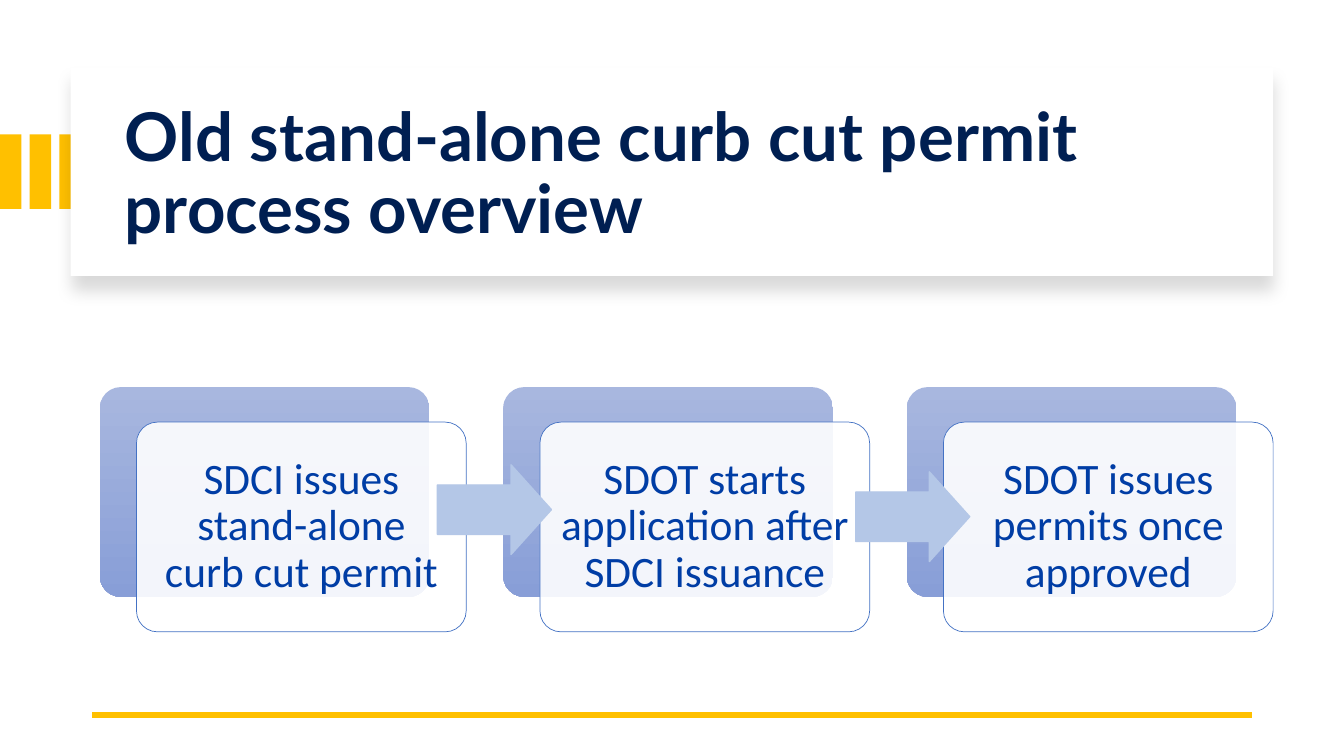
from lxml import etree
from pptx import Presentation
from pptx.dml.color import RGBColor
from pptx.enum.shapes import MSO_CONNECTOR, MSO_SHAPE
from pptx.enum.text import MSO_ANCHOR, PP_ALIGN
from pptx.oxml import parse_xml
from pptx.oxml.ns import nsdecls, qn
from pptx.util import Pt

RECTANGLE = MSO_SHAPE.RECTANGLE
ROUNDED = MSO_SHAPE.ROUNDED_RECTANGLE
RIGHT_ARROW = MSO_SHAPE.RIGHT_ARROW
STRAIGHT = MSO_CONNECTOR.STRAIGHT
MIDDLE = MSO_ANCHOR.MIDDLE
CENTER = PP_ALIGN.CENTER

WHITE = RGBColor(0xFF, 0xFF, 0xFF)
GOLD = RGBColor(0xFF, 0xC0, 0x00)
NAVY = RGBColor(0x00, 0x1F, 0x52)
BLUE = RGBColor(0x00, 0x3D, 0xA5)
OUTLINE_BLUE = RGBColor(0x44, 0x72, 0xC4)
ARROW_BLUE = RGBColor(0xB4, 0xC7, 0xE7)
GRADIENT_TOP = RGBColor(0xA8, 0xB7, 0xDF)
GRADIENT_BOTTOM = RGBColor(0x88, 0x9E, 0xD7)

STEPS = [
    "SDCI issues stand-alone curb cut permit",
    "SDOT starts application after SDCI issuance",
    "SDOT issues permits once approved",
]
STEP_PITCH = 288.2
CARD_WIDTH, CARD_HEIGHT = 235.5, 149.8
CARD_SHIFT_X, CARD_SHIFT_Y = 26.2, 25


def add_block(slide, kind, left, top, width, height, fill=None):
    """Add a shape without outline or shadow, filled if a colour is given."""
    shape = slide.shapes.add_shape(kind, Pt(left), Pt(top), Pt(width), Pt(height))
    shape.line.fill.background()
    shape.shadow.inherit = False
    if fill is not None:
        shape.fill.solid()
        shape.fill.fore_color.rgb = fill
    return shape


def write_text(shape, text, font_name, size, color, margin):
    """Write one wrapped, vertically centred paragraph and return it."""
    frame = shape.text_frame
    frame.word_wrap = True
    frame.vertical_anchor = MIDDLE
    frame.margin_left = frame.margin_right = Pt(margin)
    frame.margin_top = frame.margin_bottom = Pt(margin)
    paragraph = frame.paragraphs[0]
    paragraph.text = text
    paragraph.line_spacing = 0.9
    paragraph.font.name = font_name
    paragraph.font.size = Pt(size)
    paragraph.font.color.rgb = color
    return paragraph


def add_drop_shadow(shape):
    """Give a shape a soft shadow that falls straight down."""
    properties = shape._element.spPr
    properties.remove(properties.find(qn("a:effectLst")))
    properties.append(parse_xml(
        f'<a:effectLst {nsdecls("a")}>'
        '<a:outerShdw blurRad="139700" dist="127000" dir="5400000" algn="t" rotWithShape="0">'
        '<a:srgbClr val="000000"><a:alpha val="15000"/></a:srgbClr>'
        '</a:outerShdw></a:effectLst>'))


def add_header(slide, left, top, width, height):
    """Draw the gold bars at the slide edge and the raised title panel."""
    for index in range(3):
        add_block(slide, RECTANGLE, index * 21.2, top + 47.8, 15.3, 53.3, GOLD)
    panel = add_block(slide, RECTANGLE, left, top, width, height, WHITE)
    add_drop_shadow(panel)
    title = slide.shapes.add_textbox(
        Pt(left + 31.7), Pt(top + 16), Pt(width - 57.6), Pt(122.4))
    paragraph = write_text(title, "Old stand-alone curb cut permit process overview",
                           "Lato", 48, NAVY, 7.2)
    paragraph.font.bold = True


def add_step(slide, left, top, text):
    """Draw a gradient card with a translucent text card in front of it."""
    back = add_block(slide, ROUNDED, left, top, CARD_WIDTH, CARD_HEIGHT)
    back.adjustments[0] = 0.1
    back.fill.gradient()
    back.fill.gradient_angle = 270
    for stop, color in zip(back.fill.gradient_stops, (GRADIENT_TOP, GRADIENT_BOTTOM)):
        stop.color.rgb = color

    front = add_block(slide, ROUNDED, left + CARD_SHIFT_X, top + CARD_SHIFT_Y,
                      CARD_WIDTH, CARD_HEIGHT, WHITE)
    front.adjustments[0] = 0.1
    fill_color = front._element.spPr.find(qn("a:solidFill"))[0]
    etree.SubElement(fill_color, qn("a:alpha"), val="90000")
    front.line.color.rgb = OUTLINE_BLUE
    front.line.width = Pt(0.5)
    paragraph = write_text(front, text, "Calibri", 31, BLUE, 9.4)
    paragraph.alignment = CENTER


def add_process(slide, left, top):
    """Draw the three steps in a row and the arrows between them."""
    for index, text in enumerate(STEPS):
        add_step(slide, left + index * STEP_PITCH, top, text)
    for shift_x, shift_y in ((241.2, 55.5), (540, 60.5)):
        arrow = add_block(slide, RIGHT_ARROW, left + shift_x, top + shift_y,
                          81.4, 64.1, ARROW_BLUE)
        arrow.adjustments[0] = 0.55
        arrow.adjustments[1] = 0.45
        arrow.line.color.rgb = ARROW_BLUE
        arrow.line.width = Pt(1)


def add_footer_rule(slide, left, top, width):
    """Draw the gold rule along the bottom."""
    rule = slide.shapes.add_connector(
        STRAIGHT, Pt(left + width), Pt(top), Pt(left), Pt(top))
    rule.line.color.rgb = GOLD
    rule.line.width = Pt(4.5)
    etree.SubElement(rule._element.spPr, qn("a:effectLst"))


def main():
    """Build the slide and save it."""
    presentation = Presentation()
    presentation.slide_width = Pt(960)
    presentation.slide_height = Pt(540)
    slide = presentation.slides.add_slide(presentation.slide_layouts[6])
    add_header(slide, 50.4, 48.2, 859, 149)
    add_footer_rule(slide, 66, 510.5, 828)
    add_process(slide, 71.3, 276.5)
    presentation.save("out.pptx")


if __name__ == "__main__":
    main()
